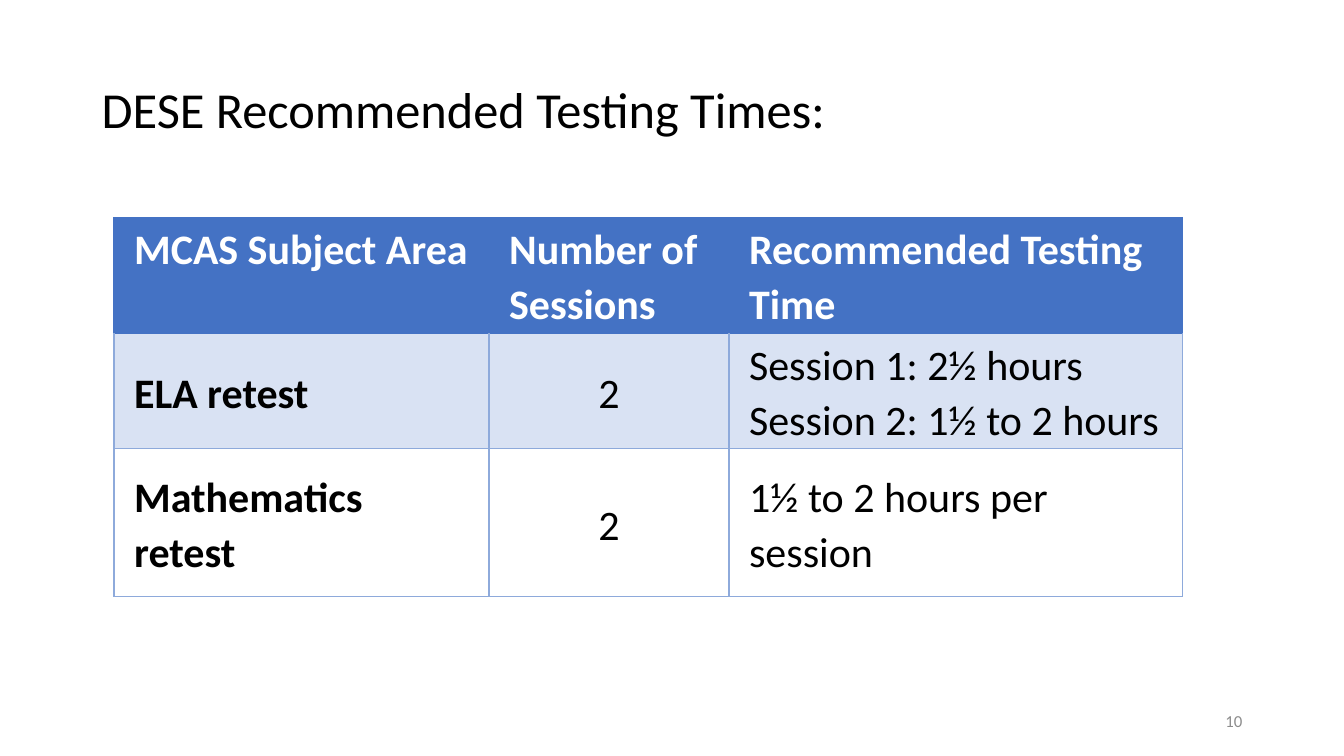
"""Build the slide of recommended testing times."""
from lxml.etree import SubElement
from pptx import Presentation
from pptx.dml.color import RGBColor
from pptx.enum.text import MSO_ANCHOR as Anchor, PP_ALIGN as Align
from pptx.oxml.ns import qn
from pptx.util import Inches, Pt

TITLE = "DESE Recommended Testing Times:"
PAGE_NUMBER = "10"
ROWS = [
    ["MCAS Subject Area", "Number of Sessions", "Recommended Testing Time"],
    ["ELA retest", "2", "Session 1: 2½ hours\nSession 2: 1½ to 2 hours"],
    ["Mathematics retest", "2", "1½ to 2 hours per session"],
]
COLUMN_WIDTHS = [3.72, 2.38, 4.5]
ROW_HEIGHTS = [1.15, 1.14, 1.47]
TABLE_LEFT, TABLE_TOP = 1.13, 2.16

FONT = "Calibri"
BLACK = RGBColor(0x00, 0x00, 0x00)
WHITE = RGBColor(0xFF, 0xFF, 0xFF)
GRAY = RGBColor(0x8C, 0x8C, 0x8C)
HEADER_BLUE = RGBColor(0x44, 0x72, 0xC4)
BAND_BLUE = RGBColor(0xD9, 0xE2, 0xF3)
GRID_BLUE = RGBColor(0x8E, 0xAA, 0xDB)
ROW_FILLS = [HEADER_BLUE, BAND_BLUE, None]
PLAIN_STYLE = "{2D5ABB26-0587-4C30-8999-92F81FD0307C}"


def style_paragraph(paragraph, size, color, bold=False, align=Align.LEFT, spacing=None):
    paragraph.font.name = FONT
    paragraph.font.size = Pt(size)
    paragraph.font.color.rgb = color
    paragraph.font.bold = bold
    paragraph.alignment = align
    paragraph.line_spacing = spacing


def add_text(slide, text, box, anchor, size, color, **style):
    shape = slide.shapes.add_textbox(*map(Inches, box))
    frame = shape.text_frame
    frame.word_wrap = True
    frame.vertical_anchor = anchor
    frame.text = text
    style_paragraph(frame.paragraphs[0], size, color, **style)
    return frame


def set_borders(cell, colors):
    properties = cell._tc.get_or_add_tcPr()
    for index, (side, color) in enumerate(colors.items()):
        line = properties.makeelement(qn(f"a:ln{side}"), {"w": str(Pt(1))})
        properties.insert(index, line)
        if color is None:
            SubElement(line, qn("a:noFill"))
        else:
            fill = SubElement(line, qn("a:solidFill"))
            SubElement(fill, qn("a:srgbClr"), val=str(color))


def fill_cell(cell, text, row, column):
    header = row == 0
    cell.text = text
    cell.margin_left = cell.margin_right = Inches(0.2)
    cell.margin_top, cell.margin_bottom = Inches(0.03), 0
    top_aligned = header or "\n" in text
    cell.vertical_anchor = Anchor.TOP if top_aligned else Anchor.MIDDLE
    for paragraph in cell.text_frame.paragraphs:
        style_paragraph(
            paragraph, 30, WHITE if header else BLACK,
            bold=header or column == 0,
            align=Align.CENTER if column == 1 and not header else Align.LEFT,
            spacing=1.07,
        )
    if ROW_FILLS[row] is None:
        cell.fill.background()
    else:
        cell.fill.solid()
        cell.fill.fore_color.rgb = ROW_FILLS[row]
    if header:
        left = HEADER_BLUE if column == 0 else None
        right = HEADER_BLUE if column == len(COLUMN_WIDTHS) - 1 else None
        set_borders(cell, {"L": left, "R": right, "T": HEADER_BLUE, "B": HEADER_BLUE})
    else:
        top = HEADER_BLUE if row == 1 else GRID_BLUE
        set_borders(cell, {"L": GRID_BLUE, "R": GRID_BLUE, "T": top, "B": GRID_BLUE})


def add_times_table(slide):
    table = slide.shapes.add_table(
        len(ROWS), len(COLUMN_WIDTHS), Inches(TABLE_LEFT), Inches(TABLE_TOP),
        Inches(sum(COLUMN_WIDTHS)), Inches(sum(ROW_HEIGHTS)),
    ).table
    table.horz_banding = False
    table._tbl.tblPr.find(qn("a:tableStyleId")).text = PLAIN_STYLE
    for column, width in zip(table.columns, COLUMN_WIDTHS):
        column.width = Inches(width)
    for row, height in zip(table.rows, ROW_HEIGHTS):
        row.height = Inches(height)
    for row, texts in enumerate(ROWS):
        for column, text in enumerate(texts):
            fill_cell(table.cell(row, column), text, row, column)


def main():
    presentation = Presentation()
    presentation.slide_width, presentation.slide_height = Inches(13.33), Inches(7.5)
    slide = presentation.slides.add_slide(presentation.slide_layouts[6])
    title = add_text(slide, TITLE, (0.91, 0.77, 11.5, 1.24), Anchor.TOP, 36, BLACK, spacing=0.9)
    title.margin_top = Inches(0.07)
    add_text(slide, PAGE_NUMBER, (9.42, 6.95, 3, 0.4), Anchor.MIDDLE, 12, GRAY, align=Align.RIGHT)
    add_times_table(slide)
    presentation.save("out.pptx")


if __name__ == "__main__":
    main()
